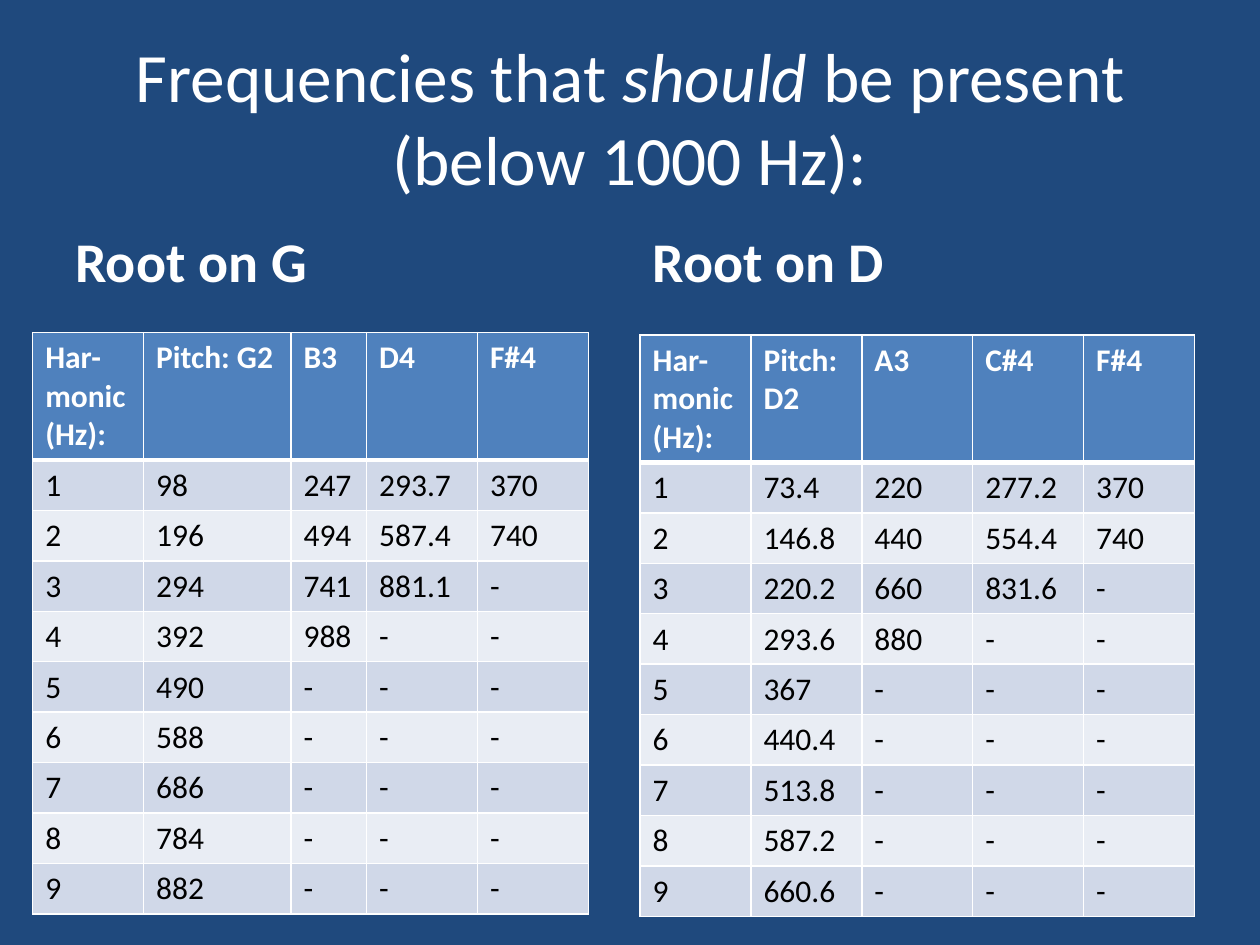
from lxml.etree import SubElement
from pptx import Presentation
from pptx.dml.color import RGBColor
from pptx.enum.text import MSO_ANCHOR, PP_ALIGN
from pptx.oxml.ns import qn
from pptx.util import Inches, Pt

COLORS = {
    "background": "1F497D",
    "white": "FFFFFF",
    "black": "000000",
    "header": "4F81BD",
    "odd": "D0D8E8",
    "even": "E9EDF4",
}
FONT = "Calibri"
HARMONICS = 9

TITLE = [("Frequencies that ", False), ("should", True),
         (" be present (below 1000 Hz):", False)]

# Each pitch column lists its harmonics below 1000 Hz.
PANELS = [
    {
        "heading": "Root on G",
        "heading_left": 0.5,
        "table_at": (0.26, 2.64),
        "widths": [0.88, 1.17, 0.6, 0.88, 0.88],
        "corner": "Har-monic (Hz):",
        "pitches": [
            ("Pitch: G2", "98 196 294 392 490 588 686 784 882"),
            ("B3", "247 494 741 988"),
            ("D4", "293.7 587.4 881.1"),
            ("F#4", "370 740"),
        ],
    },
    {
        "heading": "Root on D",
        "heading_left": 5.08,
        "table_at": (5.08, 2.66),
        "widths": [0.88] * 5,
        "corner": "Har-monic(Hz):",
        "pitches": [
            ("Pitch: D2", "73.4 146.8 220.2 293.6 367 440.4 513.8 587.2 660.6"),
            ("A3", "220 440 660 880"),
            ("C#4", "277.2 554.4 831.6"),
            ("F#4", "370 740"),
        ],
    },
]
HEADER_HEIGHT, ROW_HEIGHT = 1.01, 0.4


def color(name):
    return RGBColor.from_string(COLORS[name])


def format_run(run, size, color_name, bold=False, italic=False):
    font = run.font
    font.name, font.size = FONT, Pt(size)
    font.bold, font.italic = bold, italic
    font.color.rgb = color(color_name)


def add_text(slide, box, runs, size, anchor, bold=False):
    """Add a one-paragraph text box from (text, italic) pairs."""
    frame = slide.shapes.add_textbox(*map(Inches, box)).text_frame
    frame.word_wrap = True
    frame.vertical_anchor = anchor
    paragraph = frame.paragraphs[0]
    for text, italic in runs:
        run = paragraph.add_run()
        run.text = text
        format_run(run, size, "white", bold, italic)
    return paragraph


def set_borders(cell, top, bottom):
    properties = cell._tc.get_or_add_tcPr()
    for side, width in (("L", 1), ("R", 1), ("T", top), ("B", bottom)):
        line = SubElement(properties, qn(f"a:ln{side}"), w=str(Pt(width)))
        fill = SubElement(line, qn("a:solidFill"))
        SubElement(fill, qn("a:srgbClr"), val=COLORS["white"])


def table_rows(panel):
    columns = [[panel["corner"], *map(str, range(1, HARMONICS + 1))]]
    for pitch, frequencies in panel["pitches"]:
        values = frequencies.split()
        columns.append([pitch, *values, *["-"] * (HARMONICS - len(values))])
    return list(zip(*columns))


def add_frequency_table(slide, panel):
    rows, widths = table_rows(panel), panel["widths"]
    left, top = panel["table_at"]
    height = HEADER_HEIGHT + HARMONICS * ROW_HEIGHT
    table = slide.shapes.add_table(
        len(rows), len(widths), Inches(left), Inches(top),
        Inches(sum(widths)), Inches(height)).table
    for column, width in zip(table.columns, widths):
        column.width = Inches(width)
    for r, values in enumerate(rows):
        is_header = r == 0
        table.rows[r].height = Inches(HEADER_HEIGHT if is_header else ROW_HEIGHT)
        fill_name = "header" if is_header else "odd" if r % 2 else "even"
        for c, value in enumerate(values):
            cell = table.cell(r, c)
            cell.text_frame.text = value
            format_run(cell.text_frame.paragraphs[0].runs[0], 18,
                       "white" if is_header else "black", bold=is_header)
            set_borders(cell, 3 if r == 1 else 1, 3 if is_header else 1)
            cell.fill.solid()
            cell.fill.fore_color.rgb = color(fill_name)


def main():
    presentation = Presentation()
    presentation.slide_width, presentation.slide_height = Inches(10), Inches(7.5)
    slide = presentation.slides.add_slide(presentation.slide_layouts[6])
    slide.background.fill.solid()
    slide.background.fill.fore_color.rgb = color("background")

    title = add_text(slide, (0.5, 0.3, 9, 1.25), TITLE, 39.6, MSO_ANCHOR.MIDDLE)
    title.alignment = PP_ALIGN.CENTER
    for panel in PANELS:
        add_text(slide, (panel["heading_left"], 1.68, 4.42, 0.7),
                 [(panel["heading"], False)], 32, MSO_ANCHOR.BOTTOM, bold=True)
        add_frequency_table(slide, panel)
    presentation.save("out.pptx")


if __name__ == "__main__":
    main()
